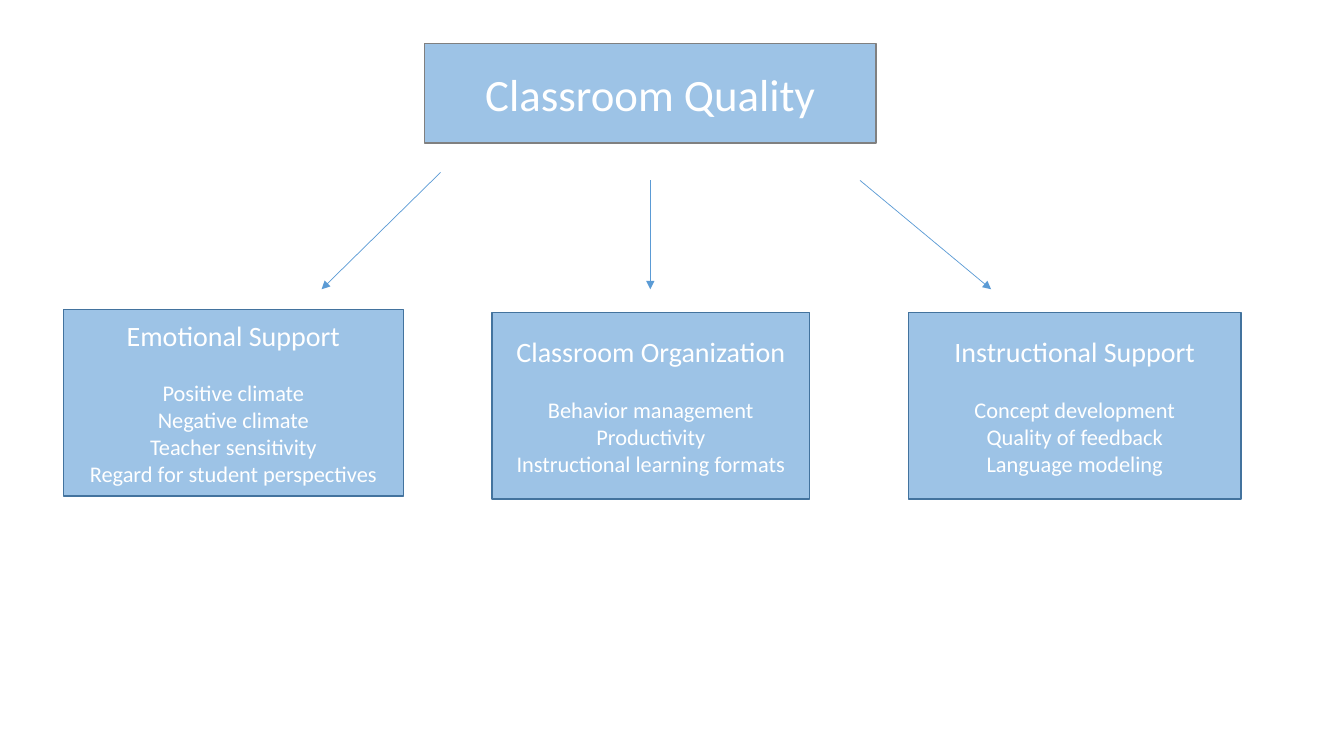
from dataclasses import dataclass

from lxml.etree import SubElement
from pptx import Presentation
from pptx.dml.color import RGBColor
from pptx.enum.shapes import MSO_CONNECTOR as Connector, MSO_SHAPE as Shape
from pptx.enum.text import MSO_ANCHOR as Anchor, PP_ALIGN as Align
from pptx.oxml.ns import qn
from pptx.util import Inches, Pt


@dataclass(frozen=True)
class Theme:
    font: str = "Calibri"
    fill: RGBColor = RGBColor(0x9D, 0xC3, 0xE6)
    text: RGBColor = RGBColor(0xFF, 0xFF, 0xFF)
    title_border: RGBColor = RGBColor(0x80, 0x80, 0x80)
    domain_border: RGBColor = RGBColor(0x43, 0x73, 0x9E)
    arrow: RGBColor = RGBColor(0x5B, 0x9B, 0xD5)
    title_size: float = 32
    heading_size: float = 20
    item_size: float = 16
    item_gap: float = 19.5
    border_width: float = 1
    arrow_width: float = 0.5


class Diagram:
    def __init__(self, slide, theme):
        self.slide = slide
        self.theme = theme

    def box(self, left, top, width, height, border):
        shape = self.slide.shapes.add_shape(
            Shape.RECTANGLE, Inches(left), Inches(top), Inches(width), Inches(height)
        )
        shape.shadow.inherit = False
        shape.fill.solid()
        shape.fill.fore_color.rgb = self.theme.fill
        shape.line.color.rgb = border
        shape.line.width = Pt(self.theme.border_width)
        shape.text_frame.word_wrap = True
        shape.text_frame.vertical_anchor = Anchor.MIDDLE
        return shape.text_frame

    def label(self, paragraph, text, size):
        paragraph.text = text
        paragraph.alignment = Align.CENTER
        paragraph.font.name = self.theme.font
        paragraph.font.size = Pt(size)
        paragraph.font.color.rgb = self.theme.text

    def title(self, text, left, top, width, height):
        frame = self.box(left, top, width, height, self.theme.title_border)
        self.label(frame.paragraphs[0], text, self.theme.title_size)

    def domain(self, heading, items, left, top, width, height):
        frame = self.box(left, top, width, height, self.theme.domain_border)
        self.label(frame.paragraphs[0], heading, self.theme.heading_size)
        for item in items:
            self.label(frame.add_paragraph(), item, self.theme.item_size)
        frame.paragraphs[1].space_before = Pt(self.theme.item_gap)

    def arrow(self, start, end):
        connector = self.slide.shapes.add_connector(
            Connector.STRAIGHT, *(Inches(value) for value in (*start, *end))
        )
        connector.line.color.rgb = self.theme.arrow
        connector.line.width = Pt(self.theme.arrow_width)
        properties = connector.element.spPr
        SubElement(properties.find(qn("a:ln")), qn("a:tailEnd"), type="triangle")
        SubElement(properties, qn("a:effectLst"))


DOMAIN_HEIGHT = 1.85
ARROW_END = 2.87
DOMAINS = [
    (
        "Instructional Support",
        ["Concept development", "Quality of feedback", "Language modeling"],
        (9.01, 3.1, 3.3), (8.53, 1.79), 9.83,
    ),
    (
        "Classroom Organization",
        ["Behavior management", "Productivity", "Instructional learning formats"],
        (4.88, 3.1, 3.15), (6.45, 1.79), 6.45,
    ),
    (
        "Emotional Support",
        ["Positive climate", "Negative climate", "Teacher sensitivity",
         "Regard for student perspectives"],
        (0.63, 3.07, 3.37), (4.37, 1.71), 3.19,
    ),
]


def main():
    presentation = Presentation()
    presentation.slide_width = Inches(13.33)
    presentation.slide_height = Inches(7.5)
    slide = presentation.slides.add_slide(presentation.slide_layouts[6])
    diagram = Diagram(slide, Theme())

    diagram.title("Classroom Quality", 4.21, 0.43, 4.48, 0.99)
    for heading, items, place, arrow_start, arrow_x in DOMAINS:
        diagram.arrow(arrow_start, (arrow_x, ARROW_END))
        diagram.domain(heading, items, *place, DOMAIN_HEIGHT)

    presentation.save("out.pptx")


if __name__ == "__main__":
    main()
